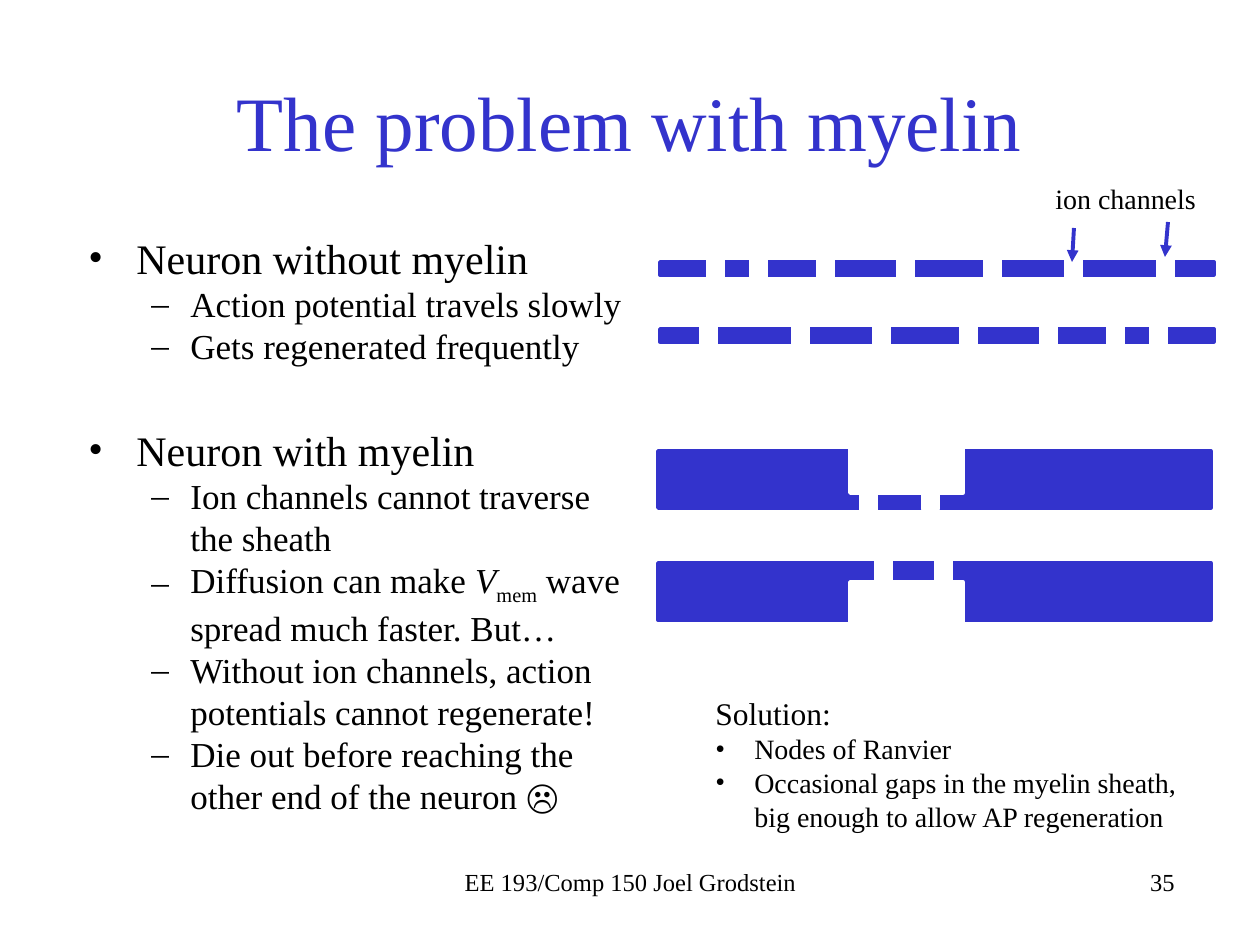
from dataclasses import dataclass
from typing import NamedTuple

from lxml.etree import SubElement
from pptx import Presentation
from pptx.dml.color import RGBColor
from pptx.enum.shapes import MSO_CONNECTOR, MSO_SHAPE
from pptx.enum.text import MSO_ANCHOR, PP_ALIGN
from pptx.oxml.ns import qn
from pptx.util import Emu, Pt


@dataclass(frozen=True)
class Theme:
    font: str = "Times New Roman"
    ink: RGBColor = RGBColor(0x00, 0x00, 0x00)
    blue: RGBColor = RGBColor(0x33, 0x33, 0xCC)
    paper: RGBColor = RGBColor(0xFF, 0xFF, 0xFF)
    title: int = 44
    topic: int = 24
    detail: int = 20
    solution: int = 18
    note: int = 16
    footer: int = 14
    outline: float = 2
    arrow: float = 2.25


THEME = Theme()
EMU_PER_PX = 914400 / 126


class Area(NamedTuple):
    left: int
    top: int
    width: int
    height: int


class Span(NamedTuple):
    text: str
    italic: bool = False
    subscript: bool = False


class Bullet(NamedTuple):
    mark: str
    margin: int
    hanging: int


@dataclass(frozen=True)
class Para:
    spans: tuple[Span, ...]
    size: int
    bullet: Bullet | None = None
    before: int = 0
    align: PP_ALIGN = PP_ALIGN.LEFT
    color: RGBColor = THEME.ink


class Arrow(NamedTuple):
    start_x: int
    start_y: int
    end_x: int
    end_y: int


TOPIC = Bullet("•", 48, 48)
DETAIL = Bullet("–", 102, 39)
NOTE = Bullet("•", 39, 39)

GAP_WIDTH, GAP_HEIGHT = 15, 24
MEMBRANE_LEFT, MEMBRANE_WIDTH, MEMBRANE_HEIGHT = 660, 554, 13
MEMBRANE_TOPS = (262, 329)
CHANNELS = (708, 751, 818, 898, 985, 1066, 1158)
SHEATHS = (Area(658, 451, 553, 57), Area(658, 563, 553, 57))
RANVIER_NODES = (Area(850, 426, 113, 67), Area(850, 582, 113, 67))
NODE_CHANNELS = ((861, 488), (923, 485), (876, 559), (936, 556))
ARROWS = (Arrow(1168, 222, 1165, 257), Arrow(1074, 228, 1072, 262))


def px(length: int) -> Emu:
    return Emu(round(length * EMU_PER_PX))


def plain(text: str, size: int, **options) -> Para:
    return Para((Span(text),), size, **options)


def topic(text: str, before: int) -> Para:
    return plain(text, THEME.topic, bullet=TOPIC, before=before)


def detail(*spans: Span) -> Para:
    return Para(spans, THEME.detail, bullet=DETAIL)


def add_bullet(paragraph, bullet: Bullet) -> None:
    properties = paragraph._p.get_or_add_pPr()
    properties.set("marL", str(px(bullet.margin)))
    properties.set("indent", str(-px(bullet.hanging)))
    SubElement(properties, qn("a:buFont"), typeface=THEME.font)
    SubElement(properties, qn("a:buChar"), char=bullet.mark)


def add_text(shapes, area: Area, paras: list[Para],
             anchor: MSO_ANCHOR = MSO_ANCHOR.TOP) -> None:
    box = shapes.add_textbox(*map(px, area))
    frame = box.text_frame
    frame.word_wrap = True
    frame.vertical_anchor = anchor
    for index, para in enumerate(paras):
        paragraph = frame.add_paragraph() if index else frame.paragraphs[0]
        paragraph.alignment = para.align
        paragraph.space_before = Pt(para.before)
        if para.bullet:
            add_bullet(paragraph, para.bullet)
        for span in para.spans:
            run = paragraph.add_run()
            run.text = span.text
            run.font.name = THEME.font
            run.font.size = Pt(para.size)
            run.font.color.rgb = para.color
            if span.italic:
                run.font.italic = True
            if span.subscript:
                run.font._element.set("baseline", "-25000")


def add_block(shapes, area: Area, color: RGBColor) -> None:
    block = shapes.add_shape(MSO_SHAPE.RECTANGLE, *map(px, area))
    block.shadow.inherit = False
    block.fill.solid()
    block.fill.fore_color.rgb = color
    block.line.color.rgb = color
    block.line.width = Pt(THEME.outline)


def add_gap(shapes, left: int, top: int) -> None:
    add_block(shapes, Area(left, top, GAP_WIDTH, GAP_HEIGHT), THEME.paper)


def add_membrane(shapes, top: int, mirrored: bool) -> None:
    """Draw a bare membrane, broken by its ion channels."""
    group = shapes.add_group_shape().shapes
    add_block(group, Area(MEMBRANE_LEFT, top, MEMBRANE_WIDTH, MEMBRANE_HEIGHT), THEME.blue)
    mirror_sum = 2 * MEMBRANE_LEFT + MEMBRANE_WIDTH - GAP_WIDTH
    for left in CHANNELS:
        add_gap(group, mirror_sum - left if mirrored else left, top - 5)


def add_myelinated_neuron(shapes) -> None:
    for sheath in SHEATHS:
        add_block(shapes, sheath, THEME.blue)
    group = shapes.add_group_shape().shapes
    for node in RANVIER_NODES:
        add_block(group, node, THEME.paper)
    for left, top in NODE_CHANNELS:
        add_gap(group, left, top)


def add_arrow(shapes, arrow: Arrow) -> None:
    connector = shapes.add_connector(MSO_CONNECTOR.STRAIGHT, *map(px, arrow))
    connector.line.color.rgb = THEME.blue
    connector.line.width = Pt(THEME.arrow)
    SubElement(connector.line._get_or_add_ln(), qn("a:tailEnd"), type="triangle")
    SubElement(connector._element.spPr, qn("a:effectLst"))


def main() -> None:
    deck = Presentation()
    deck.slide_width, deck.slide_height = px(1260), px(945)
    page = deck.slides.add_slide(deck.slide_layouts[6])
    shapes = page.shapes

    add_text(shapes, Area(788, 861, 399, 63),
             [plain("35", THEME.footer, align=PP_ALIGN.RIGHT)])
    add_text(shapes, Area(94, 42, 1071, 157),
             [plain("The problem with myelin", THEME.title,
                    align=PP_ALIGN.CENTER, color=THEME.blue)], MSO_ANCHOR.MIDDLE)
    add_text(shapes, Area(76, 226, 564, 554), [
        topic("Neuron without myelin", 5),
        detail(Span("Action potential travels slowly")),
        detail(Span("Gets regenerated frequently")),
        topic("Neuron with myelin", 33),
        detail(Span("Ion channels cannot traverse the sheath")),
        detail(Span("Diffusion can make "), Span("V", italic=True),
               Span("mem", subscript=True), Span(" wave spread much faster. But…")),
        detail(Span("Without ion channels, action potentials cannot regenerate!")),
        detail(Span("Die out before reaching the other end of the neuron ☹")),
    ])
    add_text(shapes, Area(431, 861, 399, 43),
             [plain("EE 193/Comp 150 Joel Grodstein", THEME.footer, align=PP_ALIGN.CENTER)])

    for top, mirrored in zip(MEMBRANE_TOPS, (False, True)):
        add_membrane(shapes, top, mirrored)
    add_text(shapes, Area(1043, 175, 181, 47), [plain("ion channels", THEME.note)])
    for arrow in ARROWS:
        add_arrow(shapes, arrow)
    add_myelinated_neuron(shapes)

    add_text(shapes, Area(703, 688, 517, 152), [
        plain("Solution:", THEME.solution),
        plain("Nodes of Ranvier", THEME.note, bullet=NOTE),
        plain("Occasional gaps in the myelin sheath, big enough to allow AP regeneration",
              THEME.note, bullet=NOTE),
    ])
    deck.save("out.pptx")


if __name__ == "__main__":
    main()
